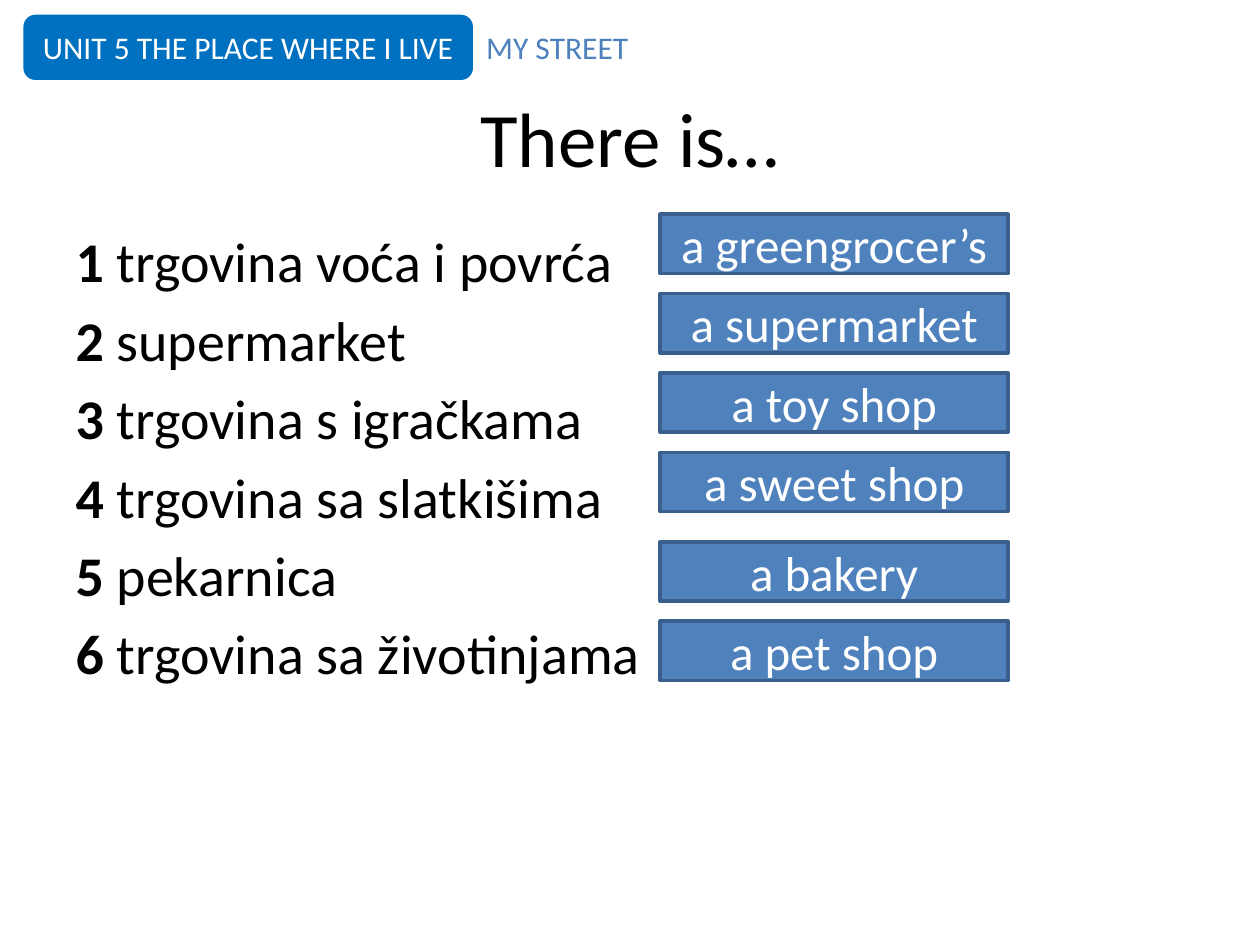
from lxml.etree import SubElement
from pptx import Presentation
from pptx.dml.color import RGBColor
from pptx.enum.shapes import MSO_SHAPE
from pptx.enum.text import MSO_ANCHOR, PP_ALIGN
from pptx.oxml.ns import qn
from pptx.util import Pt

BLACK = RGBColor(0x00, 0x00, 0x00)
WHITE = RGBColor(0xFF, 0xFF, 0xFF)
BLUE = RGBColor(0x4F, 0x81, 0xBD)
DARK_BLUE = RGBColor(0x3A, 0x5F, 0x8C)
UNIT_BLUE = RGBColor(0x00, 0x70, 0xC0)

SHOPS = [
    ("trgovina voća i povrća", "a greengrocer’s"),
    ("supermarket", "a supermarket"),
    ("trgovina s igračkama", "a toy shop"),
    ("trgovina sa slatkišima", "a sweet shop"),
    ("pekarnica", "a bakery"),
    ("trgovina sa životinjama", "a pet shop"),
]


def add_run(p, text, color, **fmt):
    r = p.add_run()
    r.text = text
    r.font.color.rgb = color
    for name, value in {"name": "Calibri", **fmt}.items():
        setattr(r.font, name, value)


def add_label(kind, box, text, size, fill, line):
    """Add a filled, outlined shape with centred white text."""
    sp = s.shapes.add_shape(kind, *map(Pt, box))
    sp.shadow.inherit = False
    sp.fill.solid()
    sp.fill.fore_color.rgb = fill
    sp.line.color.rgb = line
    sp.line.width = Pt(2)
    tf = sp.text_frame
    tf.vertical_anchor = MSO_ANCHOR.MIDDLE
    p = tf.paragraphs[0]
    p.alignment = PP_ALIGN.CENTER
    add_run(p, text, WHITE, size=Pt(size))


prs = Presentation()
prs.slide_width, prs.slide_height = Pt(720), Pt(540)
s = prs.slides.add_slide(prs.slide_layouts[1])

# Title and word list
title, body = s.placeholders
for sp, box in ((title, (36, 44.6, 648, 67)), (body, (36, 126, 341.3, 356.4))):
    sp.left, sp.top, sp.width, sp.height = map(Pt, box)
title.text_frame.vertical_anchor = MSO_ANCHOR.MIDDLE
p = title.text_frame.paragraphs[0]
p.alignment = PP_ALIGN.CENTER
add_run(p, "There is…", BLACK, size=Pt(44))

tf = body.text_frame
for i, (word, answer) in enumerate(SHOPS):
    p = tf.add_paragraph() if i else tf.paragraphs[0]
    SubElement(p._p.get_or_add_pPr(), qn("a:buNone"))
    add_run(p, f"{i + 1} ", BLACK, size=Pt(32), bold=True)
    add_run(p, word, BLACK, size=Pt(32), bold=False)

# Answers, with a wider gap before the last two
for i, (word, answer) in enumerate(SHOPS):
    top = 122.4 + 45.35 * i + (5.8 if i >= 4 else 0)
    add_label(MSO_SHAPE.RECTANGLE, (377.3, top, 198.7, 33.9),
              answer, 28, BLUE, DARK_BLUE)

# Unit header
add_label(MSO_SHAPE.ROUNDED_RECTANGLE, (14.4, 9.4, 254.9, 35.3),
          "UNIT 5 THE PLACE WHERE I LIVE", 18, UNIT_BLUE, UNIT_BLUE)
sp = s.shapes.add_textbox(Pt(270.7), Pt(9.4), Pt(133.2), Pt(35.3))
tf = sp.text_frame
tf.word_wrap = True
tf.vertical_anchor = MSO_ANCHOR.MIDDLE
add_run(tf.paragraphs[0], "MY STREET", BLUE, size=Pt(18))

prs.save("out.pptx")
